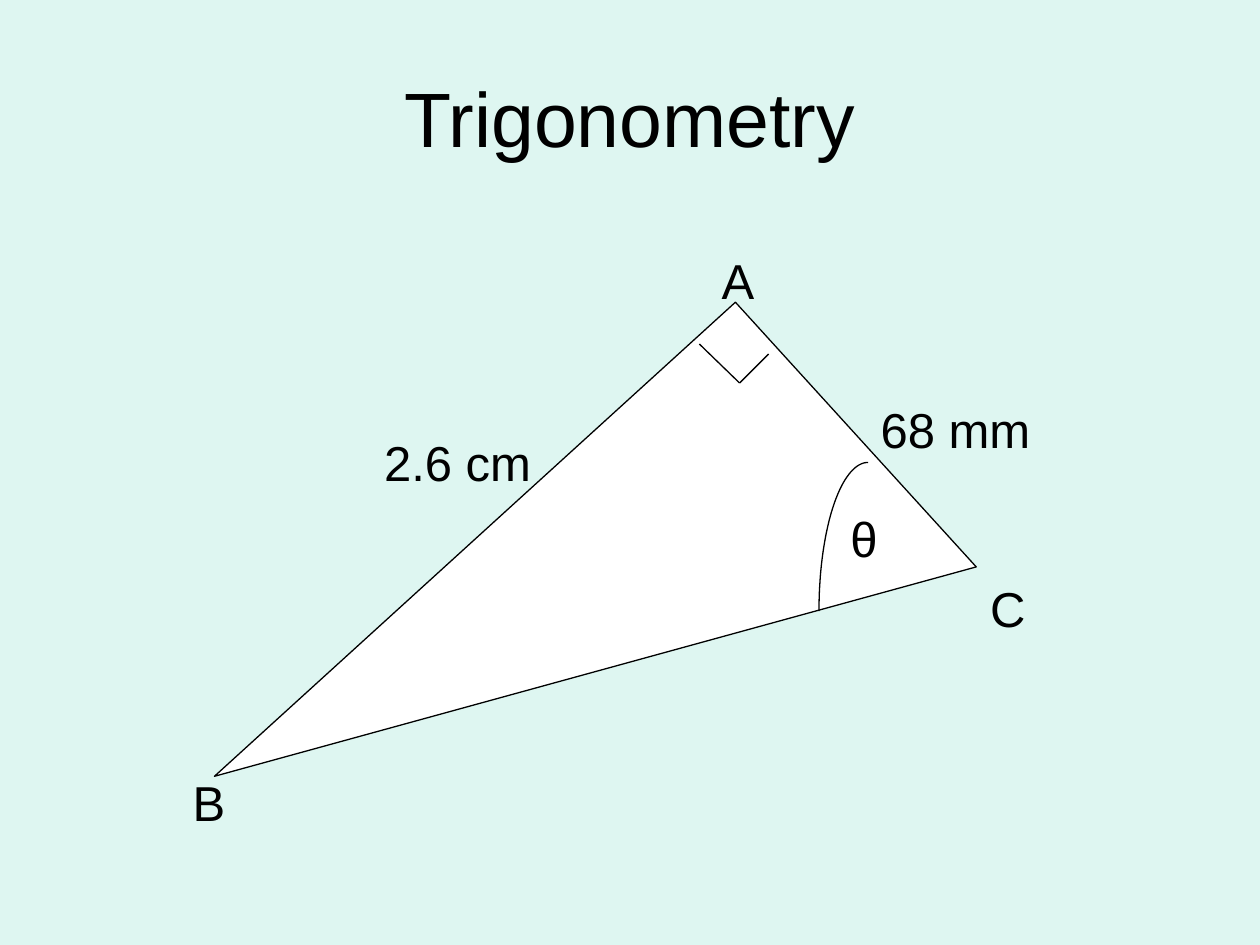
from math import cos, pi, sin
from typing import NamedTuple

from lxml.etree import SubElement
from pptx import Presentation
from pptx.dml.color import RGBColor
from pptx.enum.shapes import MSO_CONNECTOR, MSO_SHAPE
from pptx.enum.text import MSO_ANCHOR, MSO_AUTO_SIZE, PP_ALIGN
from pptx.oxml.ns import qn
from pptx.util import Emu, Inches, Pt

COLUMNS, ROWS = 100, 75
CELL = Inches(0.1)
FONT = "Arial"
COLORS = {"background": "DEF6F1", "ink": "000000", "triangle": "FFFFFF"}
LINE_WIDTH = Pt(0.75)
LABEL_ROWS = 5.7
ARC_STEPS = 48


class Point(NamedTuple):
    column: float
    row: float


class Label(NamedTuple):
    text: str
    corner: Point
    columns: float
    wraps: bool = False


LABELS = [
    Label("2.6 cm", Point(29.5, 33.8), 13.7),
    Label("68 mm", Point(68.9, 31.2), 14.2, True),
    Label("θ", Point(66.5, 39.9), 6.5, True),
    Label("A", Point(56.3, 19.4), 4.6),
    Label("B", Point(14.3, 60.8), 4.6),
    Label("C", Point(77.6, 45.4), 4.8),
]
RIGHT_ANGLE = [Point(55.5, 27.3), Point(58.7, 30.4), Point(61, 28.1)]


def grid(cells: float) -> Emu:
    return Emu(round(cells * CELL))


def color(name: str) -> RGBColor:
    return RGBColor.from_string(COLORS[name])


def style_line(line) -> None:
    line.color.rgb = color("ink")
    line.width = LINE_WIDTH


def add_span(para, text: str, size: int) -> None:
    span = para.add_run()
    span.text = text
    span.font.name = FONT
    span.font.size = Pt(size)
    span.font.color.rgb = color("ink")


def add_title(page, text: str) -> None:
    title = page.shapes.title
    title.left, title.top = grid(5), grid(3)
    title.width, title.height = grid(90), grid(12.5)
    title.text_frame.vertical_anchor = MSO_ANCHOR.MIDDLE
    para = title.text_frame.paragraphs[0]
    para.alignment = PP_ALIGN.CENTER
    add_span(para, text, 44)


def add_triangle(page, corner: Point, columns: float, rows: float, angle: float) -> None:
    triangle = page.shapes.add_shape(
        MSO_SHAPE.RIGHT_TRIANGLE,
        grid(corner.column), grid(corner.row), grid(columns), grid(rows),
    )
    triangle.rotation = angle
    triangle.shadow.inherit = False
    triangle.fill.solid()
    triangle.fill.fore_color.rgb = color("triangle")
    style_line(triangle.line)


def add_line(page, start: Point, end: Point) -> None:
    line = page.shapes.add_connector(
        MSO_CONNECTOR.STRAIGHT,
        grid(start.column), grid(start.row), grid(end.column), grid(end.row),
    )
    style_line(line.line)
    SubElement(line._element.spPr, qn("a:effectLst"))


def add_angle_arc(page, center: Point, columns: float, rows: float) -> None:
    angles = [pi / 2 * step / ARC_STEPS for step in range(ARC_STEPS + 1)]
    points = [
        (grid(center.column - columns * sin(angle)), grid(center.row - rows * cos(angle)))
        for angle in angles
    ]
    builder = page.shapes.build_freeform(*points[0])
    builder.add_line_segments(points[1:], close=False)
    arc = builder.convert_to_shape()
    arc.shadow.inherit = False
    arc.fill.background()
    style_line(arc.line)


def add_label(page, label: Label) -> None:
    box = page.shapes.add_textbox(
        grid(label.corner.column), grid(label.corner.row),
        grid(label.columns), grid(LABEL_ROWS),
    )
    frame = box.text_frame
    frame.word_wrap = label.wraps
    frame.auto_size = MSO_AUTO_SIZE.SHAPE_TO_FIT_TEXT
    add_span(frame.paragraphs[0], label.text, 28)


def main() -> None:
    deck = Presentation()
    deck.slide_width, deck.slide_height = grid(COLUMNS), grid(ROWS)
    page = deck.slides.add_slide(deck.slide_layouts.get_by_name("Title Only"))
    page.background.fill.solid()
    page.background.fill.fore_color.rgb = color("background")

    add_title(page, "Trigonometry")
    add_triangle(page, Point(19.3, 39.1), 55.9, 28.4, 137.7)
    for start, end in zip(RIGHT_ANGLE, RIGHT_ANGLE[1:]):
        add_line(page, start, end)
    add_angle_arc(page, Point(68.9, 48.5), 3.9, 11.8)
    for label in LABELS:
        add_label(page, label)
    deck.save("out.pptx")


if __name__ == "__main__":
    main()
